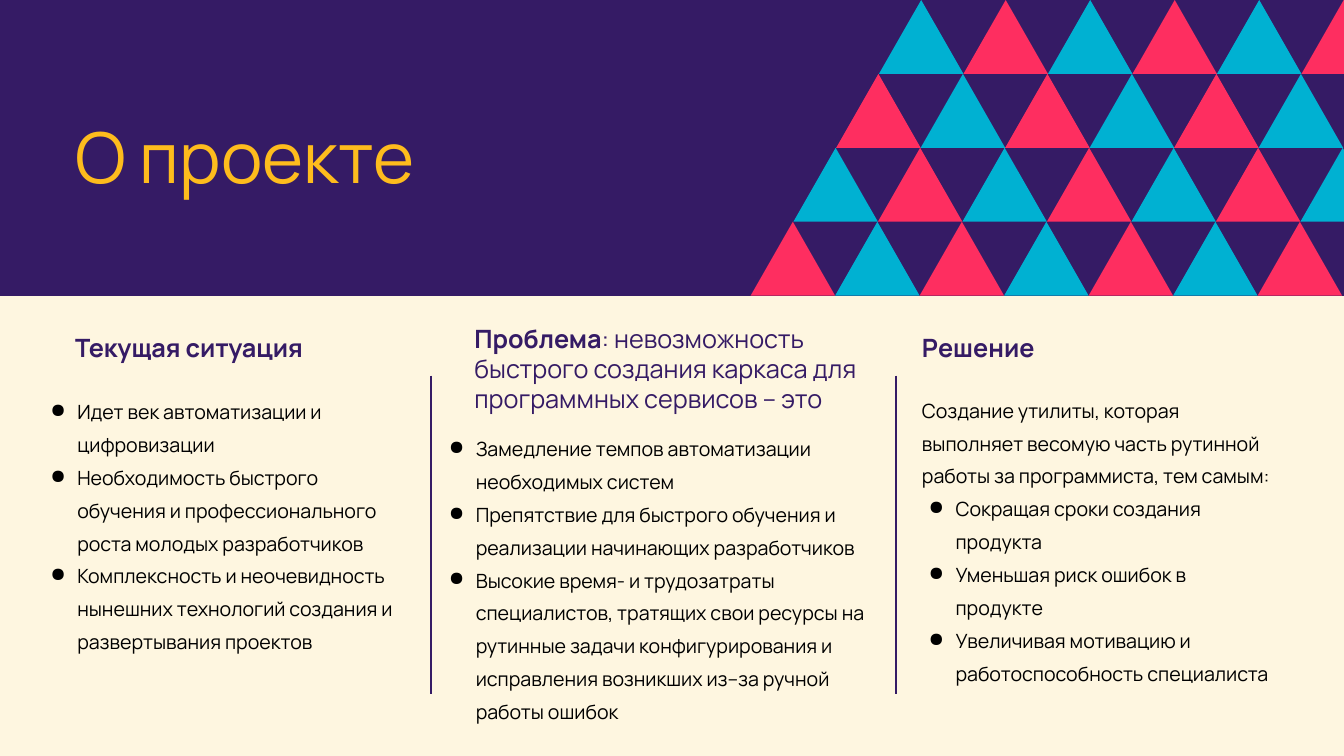
"""Build the project overview slide with a triangle banner and three columns."""
from dataclasses import dataclass

from lxml.etree import SubElement
from pptx import Presentation
from pptx.dml.color import RGBColor
from pptx.enum.shapes import MSO_CONNECTOR
from pptx.enum.text import MSO_AUTO_SIZE
from pptx.oxml.ns import qn
from pptx.slide import Slide
from pptx.text.text import TextFrame
from pptx.util import Inches, Pt

PURPLE = RGBColor(0x35, 0x1B, 0x65)
CREAM = RGBColor(0xFE, 0xF6, 0xE0)
RED = RGBColor(0xFE, 0x2E, 0x60)
CYAN = RGBColor(0x00, 0xB1, 0xD2)
YELLOW = RGBColor(0xFE, 0xBC, 0x1D)
BLACK = RGBColor(0x00, 0x00, 0x00)

FONT = "Manrope"
BANNER_HEIGHT = 4.4
ROW_HEIGHT = 1.1
TRIANGLE_WIDTH = 1.2575
ROW_COUNTS = (6, 6, 7, 7)
PATTERN_LEFT = 13.08
ROW_SHIFT = 0.6367


@dataclass(frozen=True)
class Area:
    left: float
    top: float
    width: float
    height: float


@dataclass(frozen=True)
class Column:
    heading: str
    heading_area: Area
    body_area: Area
    bullets: tuple[str, ...]
    heading_rest: str = ""
    heading_spacing: float = 1.3
    intro: str = ""


COLUMNS = (
    Column(
        "Текущая ситуация",
        Area(1.12, 4.81, 5.63, 0.45),
        Area(0.65, 5.81, 5.29, 3.82),
        (
            "Идет век автоматизации и цифровизации",
            "Необходимость быстрого обучения и профессионального роста молодых разработчиков",
            "Комплексность и неочевидность нынешних технологий создания и развертывания проектов",
        ),
    ),
    Column(
        "Проблема",
        Area(7.06, 4.81, 6.35, 1.36),
        Area(6.58, 6.36, 6.51, 4.31),
        (
            "Замедление темпов автоматизации необходимых систем",
            "Препятствие для быстрого обучения и реализации начинающих разработчиков",
            "Высокие время- и трудозатраты специалистов, тратящих свои ресурсы на рутинные задачи "
            "конфигурирования и исправления возникших из–за ручной работы ошибок",
        ),
        heading_rest=": невозможность быстрого создания каркаса для программных сервисов – это",
        heading_spacing=1.0,
    ),
    Column(
        "Решение",
        Area(13.72, 4.81, 3.24, 0.45),
        Area(13.72, 5.79, 5.26, 4.81),
        (
            "Сокращая сроки создания продукта",
            "Уменьшая риск ошибок в продукте",
            "Увеличивая мотивацию и работоспособность специалиста",
        ),
        intro="Создание утилиты, которая выполняет весомую часть рутинной работы за программиста, "
        "тем самым:",
    ),
)


def add_polygon(shapes, points: list[tuple[float, float]], color: RGBColor) -> None:
    start, *others = [(Inches(x), Inches(y)) for x, y in points]
    builder = shapes.build_freeform(*start)
    builder.add_line_segments(others, close=True)
    polygon = builder.convert_to_shape()
    polygon.shadow.inherit = False
    polygon.fill.solid()
    polygon.fill.fore_color.rgb = color
    polygon.line.fill.background()


def add_triangles(page: Slide) -> None:
    pattern = page.shapes.add_group_shape().shapes
    for row, count in enumerate(ROW_COUNTS):
        top = row * ROW_HEIGHT
        bottom = top + ROW_HEIGHT
        for column in range(count):
            left = PATTERN_LEFT - row * ROW_SHIFT + column * TRIANGLE_WIDTH
            right = left + TRIANGLE_WIDTH
            color = RED if (row + column) % 2 else CYAN
            add_polygon(pattern, [((left + right) / 2, top), (right, bottom), (left, bottom)], color)


def add_box(page: Slide, area: Area) -> TextFrame:
    box = page.shapes.add_textbox(
        Inches(area.left), Inches(area.top), Inches(area.width), Inches(area.height)
    )
    frame = box.text_frame
    frame.word_wrap = True
    frame.auto_size = MSO_AUTO_SIZE.SHAPE_TO_FIT_TEXT
    frame.margin_left = frame.margin_top = frame.margin_right = frame.margin_bottom = 0
    return frame


def add_bullet(para) -> None:
    properties = para._p.get_or_add_pPr()
    properties.set("marL", str(Inches(0.5)))
    properties.set("indent", str(Inches(-0.4)))
    bullet_color = SubElement(properties, qn("a:buClr"))
    SubElement(bullet_color, qn("a:srgbClr"), val=str(BLACK))
    SubElement(properties, qn("a:buChar"), char="●")


def add_span(para, text: str, *, size: float, color: RGBColor, bold: bool = False) -> None:
    span = para.add_run()
    span.text = text
    span.font.name = FONT
    span.font.size = Pt(size)
    span.font.bold = bold
    span.font.color.rgb = color


def add_column(page: Slide, column: Column) -> None:
    heading = add_box(page, column.heading_area).paragraphs[0]
    heading.line_spacing = column.heading_spacing
    add_span(heading, column.heading, size=27, color=PURPLE, bold=True)
    if column.heading_rest:
        add_span(heading, column.heading_rest, size=27, color=PURPLE)

    frame = add_box(page, column.body_area)
    intro = (column.intro,) if column.intro else ()
    for index, text in enumerate(intro + column.bullets):
        para = frame.add_paragraph() if index else frame.paragraphs[0]
        para.line_spacing = 1.4
        if index >= len(intro):
            add_bullet(para)
        add_span(para, text, size=21, color=BLACK)


def add_divider(page: Slide, left: float) -> None:
    divider = page.shapes.add_connector(
        MSO_CONNECTOR.STRAIGHT, Inches(left), Inches(5.59), Inches(left), Inches(10.33)
    )
    divider.line.color.rgb = PURPLE
    divider.line.width = Pt(2.25)
    SubElement(divider._element.spPr, qn("a:effectLst"))


def main() -> None:
    deck = Presentation()
    deck.slide_width = Inches(20)
    deck.slide_height = Inches(11.25)
    page = deck.slides.add_slide(deck.slide_layouts[6])
    page.background.fill.solid()
    page.background.fill.fore_color.rgb = CREAM

    banner = [(0, 0), (20, 0), (20, BANNER_HEIGHT), (0, BANNER_HEIGHT)]
    add_polygon(page.shapes, banner, PURPLE)
    add_triangles(page)

    title = add_box(page, Area(1.12, 1.44, 8.42, 1.26)).paragraphs[0]
    title.line_spacing = 1.2
    add_span(title, "О проекте", size=75, color=YELLOW)

    for column in COLUMNS:
        add_column(page, column)
    for left in (6.41, 13.33):
        add_divider(page, left)
    deck.save("out.pptx")


if __name__ == "__main__":
    main()
